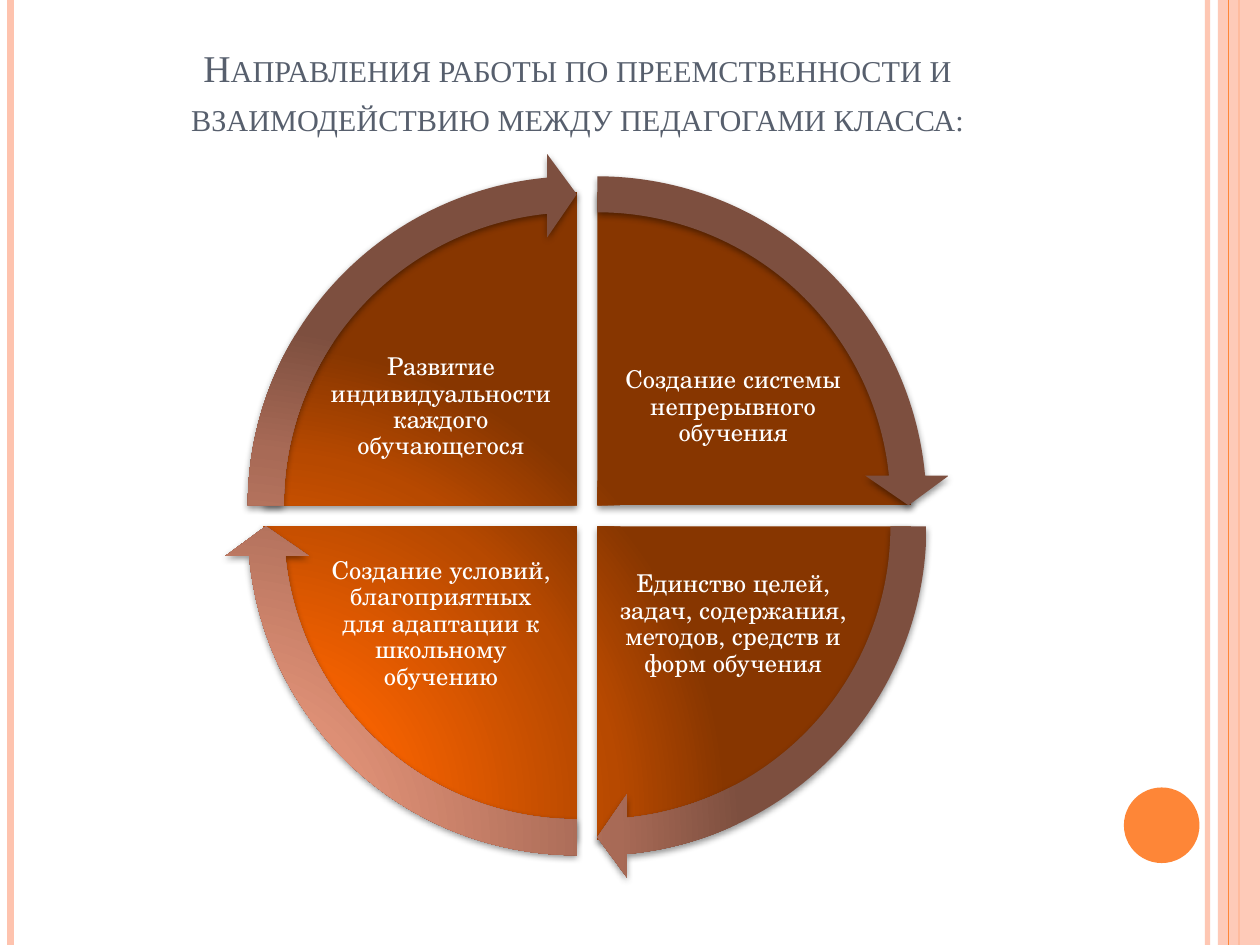
from dataclasses import dataclass

from lxml.etree import SubElement
from pptx import Presentation
from pptx.dml.color import RGBColor
from pptx.enum.shapes import MSO_CONNECTOR, MSO_SHAPE
from pptx.enum.text import MSO_ANCHOR, PP_ALIGN
from pptx.oxml.ns import qn
from pptx.util import Pt

WIDTH, HEIGHT = 720, 540
FULL_TURN = 216  # angle adjustments count 0.6 per degree
QUARTER_TURN = FULL_TURN / 4


@dataclass(frozen=True)
class Theme:
    peach: str = "FEC3AE"
    orange: str = "FE8637"
    title_color: str = "575F6D"
    label_color: str = "FFFFFF"
    sector_stops: tuple = ((0, "FD6400"), (30, "F46100"), (75, "B74900"), (100, "873600"))
    arrow_stops: tuple = ((0, "E59579"), (30, "DD8F75"), (75, "A86A56"), (100, "7D4F3F"))
    title_font: str = "Times New Roman"
    label_font: str = "TeX Gyre Schola"
    title_size: float = 21.6
    label_size: float = 14


def add_alpha(color_element, percent):
    SubElement(color_element, qn("a:alpha"), val=str(percent * 1000))


class SlideBuilder:
    def __init__(self, slide, theme):
        self.slide = slide
        self.theme = theme

    def vertical_line(self, x, color, width, opacity=100):
        line = self.slide.shapes.add_connector(
            MSO_CONNECTOR.STRAIGHT, Pt(x), Pt(0), Pt(x), Pt(HEIGHT))
        line.line.color.rgb = RGBColor.from_string(color)
        line.line.width = Pt(width)
        properties = line.element.spPr
        if opacity < 100:
            add_alpha(next(properties.iter(qn("a:srgbClr"))), opacity)
        SubElement(properties, qn("a:effectLst"))

    def shape(self, kind, left, top, width, height):
        """Add a preset shape with neither outline nor shadow."""
        shape = self.slide.shapes.add_shape(kind, Pt(left), Pt(top), Pt(width), Pt(height))
        shape.shadow.inherit = False
        shape.line.fill.background()
        return shape

    def solid_shape(self, kind, left, top, width, height, color, opacity=100):
        shape = self.shape(kind, left, top, width, height)
        shape.fill.solid()
        shape.fill.fore_color.rgb = RGBColor.from_string(color)
        if opacity < 100:
            add_alpha(next(shape.element.spPr.iter(qn("a:srgbClr"))), opacity)

    def glowing_shape(self, kind, center, size, adjustments, stops):
        """Add a square shape with a radial gradient and a soft shadow."""
        x, y = center
        shape = self.shape(kind, x - size / 2, y - size / 2, size, size)
        for index, value in enumerate(adjustments):
            shape.adjustments[index] = value
        self.radial_gradient(shape, stops)
        self.soft_shadow(shape)

    def radial_gradient(self, shape, stops):
        shape.fill.background()
        properties = shape.element.spPr
        no_fill = properties.find(qn("a:noFill"))
        gradient = SubElement(properties, qn("a:gradFill"), rotWithShape="1")
        properties.replace(no_fill, gradient)
        stop_list = SubElement(gradient, qn("a:gsLst"))
        for position, color in stops:
            stop = SubElement(stop_list, qn("a:gs"), pos=str(position * 1000))
            SubElement(stop, qn("a:srgbClr"), val=color)
        focus = SubElement(gradient, qn("a:path"), path="circle")
        SubElement(focus, qn("a:fillToRect"), l="5000", t="100000", r="120000", b="10000")

    def soft_shadow(self, shape):
        effects = shape.element.spPr.find(qn("a:effectLst"))
        shadow = SubElement(effects, qn("a:outerShdw"), blurRad=str(Pt(4)), dist=str(Pt(1.6)),
                            dir="5400000", rotWithShape="0")
        add_alpha(SubElement(shadow, qn("a:srgbClr"), val="000000"), 42)

    def text(self, box, text, font, size, color, anchor, spacing, inset=None):
        frame = self.slide.shapes.add_textbox(*map(Pt, box)).text_frame
        frame.word_wrap = True
        frame.vertical_anchor = anchor
        if inset is not None:
            frame.margin_left = frame.margin_right = Pt(inset)
            frame.margin_top = frame.margin_bottom = Pt(inset)
        frame.text = text
        paragraph = frame.paragraphs[0]
        paragraph.alignment = PP_ALIGN.CENTER
        paragraph.line_spacing = spacing
        run = paragraph.runs[0]
        run.font.name = font
        run.font.size = Pt(size)
        run.font.color.rgb = RGBColor.from_string(color)
        return frame

    def title(self, box, text):
        theme = self.theme
        frame = self.text(box, text, theme.title_font, theme.title_size, theme.title_color,
                          MSO_ANCHOR.BOTTOM, 1.07)
        for properties in frame.paragraphs[0].runs[0].font._element.iter(qn("a:rPr")):
            properties.set("cap", "small")

    def label(self, center, text):
        theme = self.theme
        width, height = 132.5, 98
        box = (center[0] - width / 2, center[1] - height / 2, width, height)
        self.text(box, text, theme.label_font, theme.label_size, theme.label_color,
                  MSO_ANCHOR.MIDDLE, 0.9, inset=1.4)

    def sector(self, center, start):
        end = (start + QUARTER_TURN) % FULL_TURN
        self.glowing_shape(MSO_SHAPE.PIE, center, 358.5, (start, end), self.theme.sector_stops)

    def arrow(self, center, start):
        tip = (start + 50.725) % FULL_TURN
        self.glowing_shape(MSO_SHAPE.CIRCULAR_ARROW, center, 403,
                           (0.051, 3.275, tip, start, 0.059), self.theme.arrow_stops)


def main():
    presentation = Presentation()
    presentation.slide_width, presentation.slide_height = Pt(WIDTH), Pt(HEIGHT)
    theme = Theme()
    builder = SlideBuilder(presentation.slides.add_slide(presentation.slide_layouts[6]), theme)

    builder.vertical_line(690, theme.peach, 3, opacity=93)
    builder.vertical_line(6, theme.peach, 4.5)
    builder.vertical_line(708, theme.orange, 1.5)
    builder.solid_shape(MSO_SHAPE.RECTANGLE, 696, 0, 24, HEIGHT, theme.peach, opacity=87)
    builder.vertical_line(702, theme.orange, 0.75)
    builder.solid_shape(MSO_SHAPE.OVAL, 642.25, 450, 43.2, 43.2, theme.orange)
    builder.title((36, 21.6, 588, 61.2), "Направления работы по преемственности "
                  "и взаимодействию между педагогами класса:")

    # Horizontal side, vertical side, text: clockwise from the top right.
    quadrants = (
        (1, -1, "Создание системы непрерывного обучения"),
        (1, 1, "Единство целей, задач, содержания, методов, средств и форм обучения"),
        (-1, 1, "Создание условий, благоприятных для адаптации к школьному обучению"),
        (-1, -1, "Развитие индивидуальности каждого обучающегося"),
    )
    middle_x, middle_y = 335.5, 294.75
    arrows = []
    for index, (side_x, side_y, text) in enumerate(quadrants):
        center = (middle_x + side_x * 5.9, middle_y + side_y * 6)
        start = (index + 3) * QUARTER_TURN % FULL_TURN
        builder.sector(center, start)
        builder.label((middle_x + side_x * 83.5, middle_y + side_y * 62), text)
        arrows.append((center, start))
    for center, start in arrows:
        builder.arrow(center, start)

    presentation.save("out.pptx")


if __name__ == "__main__":
    main()
